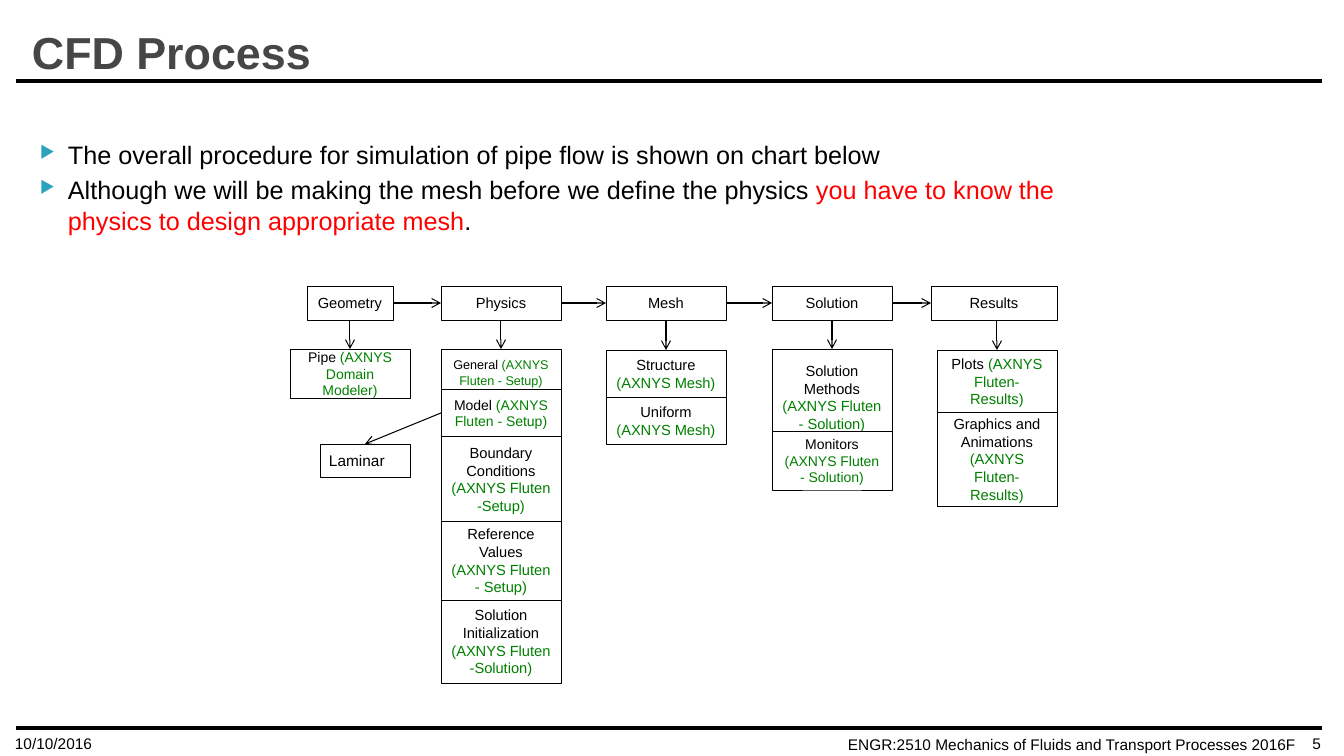
from dataclasses import dataclass

from lxml import etree
from pptx import Presentation
from pptx import util as u
from pptx.dml.color import RGBColor
from pptx.enum import shapes, text
from pptx.oxml.ns import qn

SCALE = 914400 / 100.8  # EMU per px
BLACK = RGBColor(0, 0, 0)
WHITE = RGBColor(255, 255, 255)
GRAY = RGBColor(0x46, 0x46, 0x46)
RED = RGBColor(255, 0, 0)
GREEN = RGBColor(0, 0x80, 0)
LEFT, CENTER, RIGHT = text.PP_ALIGN.LEFT, text.PP_ALIGN.CENTER, text.PP_ALIGN.RIGHT
TOP, MIDDLE, BOTTOM = (text.MSO_ANCHOR.TOP, text.MSO_ANCHOR.MIDDLE,
                       text.MSO_ANCHOR.BOTTOM)
SITE_TOP, SITE_LEFT, SITE_BOTTOM, SITE_RIGHT = range(4)
HEAD_TOP, HEAD_HEIGHT, STEP_WIDTH = 286, 34, 120


@dataclass
class Step:
    label: str
    tool: str
    top: int
    height: int
    size: float = 10.5


@dataclass
class Stage:
    name: str
    left: int
    width: int
    step_left: int
    steps: list[Step]


@dataclass
class Caption:
    words: str
    left: int
    top: int
    width: int
    height: int
    size: float = 11
    align: text.PP_ALIGN = LEFT
    anchor: text.MSO_ANCHOR = BOTTOM
    color: RGBColor = BLACK
    bold: bool = False


STAGES = [
    Stage("Geometry", 307, 86, 290, [
        Step("Pipe ", "(AXNYS Domain Modeler)", 349, 49, 10)]),
    Stage("Physics", 441, 120, 441, [
        Step("General ", "(AXNYS Fluten - Setup)", 349, 47, 9),
        Step("Model ", "(AXNYS Fluten - Setup)", 389, 48, 10),
        Step("Boundary Conditions ", "(AXNYS Fluten -Setup)", 436, 86),
        Step("Reference Values ", "(AXNYS Fluten - Setup)", 521, 79),
        Step("Solution Initialization ", "(AXNYS Fluten -Solution)", 600, 83)]),
    Stage("Mesh", 606, 120, 606, [
        Step("Structure ", "(AXNYS Mesh)", 350, 47),
        Step("Uniform ", "(AXNYS Mesh)", 397, 47)]),
    Stage("Solution", 772, 120, 772, [
        Step("Solution Methods ", "(AXNYS Fluten - Solution)", 349, 96),
        Step("Monitors ", "(AXNYS Fluten - Solution)", 431, 59, 10)]),
    Stage("Results", 931, 126, 937, [
        Step("Plots ", "(AXNYS Fluten- Results)", 350, 63),
        Step("Graphics and Animations ", "(AXNYS Fluten- Results)", 412, 94)]),
]
CAPTIONS = [
    Caption("CFD Process", 11, 22, 321, 60, 32, CENTER, MIDDLE, GRAY, True),
    Caption("ENGR:2510 Mechanics of Fluids and Transport Processes 2016F",
            838, 730, 504, 29, anchor=TOP),
    Caption("10/10/2016", 5, 718, 282, 40),
    Caption("5", 1278, 718, 53, 40, align=RIGHT),
]
BULLETS = [
    [("The overall procedure for simulation of pipe flow is shown on chart below", BLACK)],
    [("Although we will be making the mesh before we define the physics ", BLACK),
     ("you have to know the physics to design appropriate mesh", RED), (".", BLACK)],
]


def px(length: float) -> int:
    return round(length * SCALE)


def set_font(font, size: float, color: RGBColor, bold: bool = False) -> None:
    font.name, font.size, font.bold = "Arial", u.Pt(size), bold
    font.color.rgb = color


def add_spans(para, spans: list[tuple[str, RGBColor]], size: float) -> None:
    set_font(para.font, size, BLACK)
    for words, color in spans:
        span = para.add_run()
        span.text = words
        set_font(span.font, size, color)


def add_caption(page, caption: Caption) -> None:
    box = page.shapes.add_textbox(px(caption.left), px(caption.top),
                                  px(caption.width), px(caption.height))
    frame = box.text_frame
    frame.word_wrap, frame.vertical_anchor = True, caption.anchor
    para = frame.paragraphs[0]
    para.text, para.alignment = caption.words, caption.align
    set_font(para.font, caption.size, caption.color, caption.bold)


def add_bullets(page) -> None:
    box = page.shapes.add_textbox(px(18), px(134), px(1101), px(499))
    frame = box.text_frame
    frame.word_wrap = True
    for index, spans in enumerate(BULLETS):
        para = frame.add_paragraph() if index else frame.paragraphs[0]
        if index:
            para.space_before = u.Pt(4)
        props = para._p.get_or_add_pPr()
        props.set("marL", str(px(40)))
        props.set("indent", str(px(-28)))
        color = etree.SubElement(props, qn("a:buClr"))
        etree.SubElement(color, qn("a:srgbClr"), val="2DA2BF")
        etree.SubElement(props, qn("a:buSzPct"), val="68000")
        etree.SubElement(props, qn("a:buChar"), char="▶")
        add_spans(para, spans, 18)


def add_box(page, left: int, top: int, width: int, height: int,
            spans: list[tuple[str, RGBColor]], size: float = 10.5,
            align: text.PP_ALIGN = CENTER):
    box = page.shapes.add_shape(shapes.MSO_SHAPE.RECTANGLE, px(left), px(top),
                                px(width), px(height))
    box.shadow.inherit = False
    box.fill.solid()
    box.fill.fore_color.rgb = WHITE
    box.line.color.rgb, box.line.width = BLACK, u.Pt(0.5)
    frame = box.text_frame
    frame.word_wrap, frame.vertical_anchor = True, MIDDLE
    frame.margin_left = frame.margin_right = px(9)
    para = frame.paragraphs[0]
    para.alignment = align
    add_spans(para, spans, size)
    return box


def add_line(page, start: tuple[int, int], end: tuple[int, int], width: float):
    line = page.shapes.add_connector(shapes.MSO_CONNECTOR.STRAIGHT,
                                     *map(px, start + end))
    line.line.color.rgb, line.line.width = BLACK, u.Pt(width)
    etree.SubElement(line._element.spPr, qn("a:effectLst"))
    return line


def add_arrow(page, start: tuple[int, int] = (0, 0)):
    arrow = add_line(page, start, start, 0.75)
    etree.SubElement(arrow.line._get_or_add_ln(), qn("a:tailEnd"), type="arrow")
    return arrow


def join(page, source, source_site: int, target, target_site: int) -> None:
    arrow = add_arrow(page)
    arrow.begin_connect(source, source_site)
    arrow.end_connect(target, target_site)


def add_flowchart(page) -> None:
    boxes = {}
    previous = None
    for stage in STAGES:
        head = add_box(page, stage.left, HEAD_TOP, stage.width, HEAD_HEIGHT,
                       [(stage.name, BLACK)])
        if previous is not None:
            join(page, previous, SITE_RIGHT, head, SITE_LEFT)
        previous = head
        for step in stage.steps:
            boxes[step.label] = add_box(
                page, stage.step_left, step.top, STEP_WIDTH, step.height,
                [(step.label, BLACK), (step.tool, GREEN)], step.size)
        # Vertical arrow, glued to the head only where the centres agree
        center = stage.step_left + STEP_WIDTH // 2
        arrow = add_arrow(page, (center, HEAD_TOP + HEAD_HEIGHT))
        if center == stage.left + stage.width // 2:
            arrow.begin_connect(head, SITE_BOTTOM)
        arrow.end_connect(boxes[stage.steps[0].label], SITE_TOP)
    laminar = add_box(page, 320, 444, 90, 33, [("Laminar", BLACK)], 11, LEFT)
    join(page, boxes["Model "], SITE_LEFT, laminar, SITE_TOP)


def main() -> None:
    deck = Presentation()
    deck.slide_width, deck.slide_height = px(1344), px(756)
    page = deck.slides.add_slide(deck.slide_layouts[6])
    # Rules under the title and above the footer
    for y in (81, 728):
        add_line(page, (16, y), (1322, y), 2.5)
    # Title, footer and body text
    for caption in CAPTIONS:
        add_caption(page, caption)
    add_bullets(page)
    # Process chart
    add_flowchart(page)
    deck.save("out.pptx")


if __name__ == "__main__":
    main()
